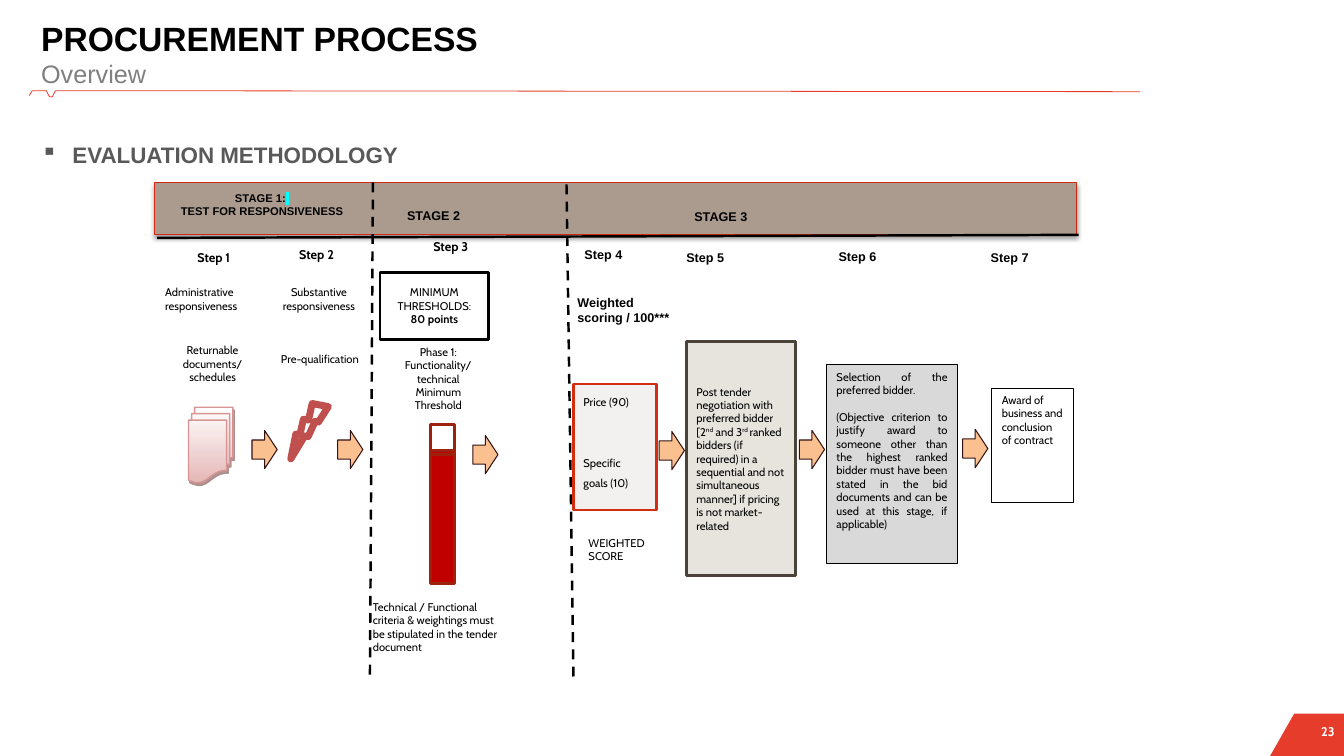
from dataclasses import dataclass, replace

import lxml.etree
import pptx
import pptx.dml.color
import pptx.enum.dml
import pptx.enum.shapes
import pptx.enum.text
import pptx.oxml.ns
import pptx.util

SHAPES = pptx.enum.shapes.MSO_SHAPE
ALIGN = pptx.enum.text.PP_ALIGN
ANCHOR = pptx.enum.text.MSO_ANCHOR
COLUMNS, ROWS = 160, 90
BLACK = "000000"


@dataclass(frozen=True)
class Cell:
    column: float
    row: float
    columns: float
    rows: float


@dataclass(frozen=True)
class Span:
    text: str
    size: float = 8
    font: str = "Cabin"
    color: str = BLACK
    bold: bool = False
    superscript: bool = False
    highlight: str = ""


@dataclass(frozen=True)
class Para:
    spans: tuple[Span, ...]
    align: int = ALIGN.LEFT
    before: float = 0
    spacing: float = 1
    bullet: str = ""


@dataclass(frozen=True)
class Block:
    cell: Cell
    paras: tuple[Para, ...]
    anchor: int = ANCHOR.MIDDLE
    fill: str = ""
    line: str = ""
    weight: float = 0


@dataclass(frozen=True)
class Shadow:
    color: str
    alpha: int
    blur: float
    distance: float
    angle: int


@dataclass(frozen=True)
class Rule:
    start: tuple[float, float]
    end: tuple[float, float]
    dashed: bool = False


deck = pptx.Presentation()
deck.slide_width = pptx.util.Inches(13.33)
deck.slide_height = pptx.util.Inches(7.5)
page = deck.slides.add_slide(deck.slide_layouts[6])


def across(columns: float) -> int:
    return round(deck.slide_width * columns / COLUMNS)


def down(rows: float) -> int:
    return round(deck.slide_height * rows / ROWS)


def place(cell: Cell) -> tuple[int, int, int, int]:
    return across(cell.column), down(cell.row), across(cell.columns), down(cell.rows)


def paint(color: str) -> pptx.dml.color.RGBColor:
    return pptx.dml.color.RGBColor.from_string(color)


def add_element(parent, tag: str, **attributes: str):
    return lxml.etree.SubElement(parent, pptx.oxml.ns.qn(tag), attributes)


def style(shape, fill: str = "", line: str = "", weight: float = 0) -> None:
    shape.shadow.inherit = False
    if fill:
        shape.fill.solid()
        shape.fill.fore_color.rgb = paint(fill)
    else:
        shape.fill.background()
    if line:
        shape.line.color.rgb = paint(line)
        shape.line.width = pptx.util.Pt(weight)
    else:
        shape.line.fill.background()


def draw_shape(kind: int, cell: Cell, fill: str = "", line: str = "", weight: float = 0):
    shape = page.shapes.add_shape(kind, *place(cell))
    style(shape, fill, line, weight)
    return shape


def cast_shadow(shape, shadow: Shadow) -> None:
    effects = shape._element.spPr.find(pptx.oxml.ns.qn("a:effectLst"))
    outer = add_element(effects, "a:outerShdw", blurRad=str(pptx.util.Pt(shadow.blur)),
                        dist=str(pptx.util.Pt(shadow.distance)),
                        dir=str(shadow.angle * 60000), algn="ctr", rotWithShape="0")
    color = add_element(outer, "a:srgbClr", val=shadow.color)
    add_element(color, "a:alpha", val=str(shadow.alpha * 1000))


def write_span(para, part: Span) -> None:
    span = para.add_run()
    span.text = part.text
    span.font.size = pptx.util.Pt(part.size)
    span.font.name = part.font
    span.font.bold = part.bold
    span.font.color.rgb = paint(part.color)
    properties = span._r.get_or_add_rPr()
    if part.superscript:
        properties.set("baseline", "30000")
    if part.highlight:
        mark = add_element(properties, "a:highlight")
        add_element(mark, "a:srgbClr", val=part.highlight)
        properties.find(pptx.oxml.ns.qn("a:solidFill")).addnext(mark)


def draw_block(block: Block):
    if block.line:
        box = draw_shape(SHAPES.RECTANGLE, block.cell, block.fill, block.line, block.weight)
    else:
        box = page.shapes.add_textbox(*place(block.cell))
    frame = box.text_frame
    frame.word_wrap = True
    frame.vertical_anchor = block.anchor
    for index, item in enumerate(block.paras):
        para = frame.add_paragraph() if index else frame.paragraphs[0]
        para.alignment = item.align
        para.line_spacing = item.spacing
        if item.before:
            para.space_before = pptx.util.Pt(item.before)
        if item.bullet:
            properties = para._p.get_or_add_pPr()
            indent = across(3.72)
            properties.set("marL", str(indent))
            properties.set("indent", str(-indent))
            add_element(properties, "a:buChar", char=item.bullet)
        for part in item.spans:
            write_span(para, part)
    return box


def draw_outline(points: list[tuple[float, float]], closed: bool):
    corners = [(across(column), down(row)) for column, row in points]
    builder = page.shapes.build_freeform(*corners[0], scale=1.0)
    builder.add_line_segments(corners[1:], close=closed)
    return builder.convert_to_shape()


def draw_rule(rule: Rule) -> None:
    line = page.shapes.add_connector(
        pptx.enum.shapes.MSO_CONNECTOR.STRAIGHT, across(rule.start[0]), down(rule.start[1]),
        across(rule.end[0]), down(rule.end[1]))
    line.line.color.rgb = paint(BLACK)
    line.line.width = pptx.util.Pt(1.75)
    if rule.dashed:
        line.line.dash_style = pptx.enum.dml.MSO_LINE.DASH
    add_element(line._element.spPr, "a:effectLst")


def plain(text: str, align: int = ALIGN.LEFT, before: float = 0, spacing: float = 1) -> Para:
    return Para((Span(text),), align, before, spacing)


def heading(text: str, size: float = 9, font: str = "Arial", color: str = BLACK) -> Para:
    return Para((Span(text, size, font, color, bold=True),))


BLOCKS = [
    Block(Cell(3.72, 1.44, 132.24, 9.72), (heading("PROCUREMENT PROCESS", 24),
          Para((Span("Overview", 18, "Arial", "808080"),)))),
    Block(Cell(3.72, 16.2, 146.64, 68.76),
          (replace(heading("EVALUATION METHODOLOGY", 16, color="595959"), bullet="▪"),), ANCHOR.TOP),
    Block(Cell(19.2, 20.88, 24, 6.96), (
        Para((Span("STAGE 1:", font="Arial", bold=True),
              Span(" ", font="Arial", bold=True, highlight="00FFFF")), ALIGN.CENTER),
        replace(heading("TEST FOR RESPONSIVENESS", 8), align=ALIGN.CENTER))),
    Block(Cell(47.28, 22.92, 12.48, 5.52), (heading("STAGE 2"),)),
    Block(Cell(81.48, 23.04, 13.68, 5.52), (heading("STAGE 3"),)),
    Block(Cell(18.48, 31.8, 12.84, 7.56), (plain("Administrative responsiveness"),)),
    Block(Cell(31.32, 31.8, 13.32, 7.56), (plain("Substantive responsiveness", ALIGN.CENTER),)),
    Block(Cell(67.56, 33.12, 15.6, 7.56), (heading("Weighted scoring / 100***"),)),
    Block(Cell(19.2, 38.52, 12.24, 9.6), (plain("Returnable documents/ schedules", ALIGN.CENTER),)),
    Block(Cell(32.04, 39.96, 12.12, 5.52), (plain("Pre-qualification", ALIGN.CENTER),)),
    Block(Cell(43.2, 68.76, 18, 11.76), (plain(
        "Technical / Functional criteria & weightings must be stipulated in the tender document"),)),
    Block(Cell(68.88, 60.12, 11.52, 10.56), (plain("WEIGHTED SCORE"),)),
    Block(Cell(46.44, 38.16, 11.52, 13.8), tuple(plain(text, ALIGN.CENTER) for text in (
        "Phase 1:", "Functionality/ technical", "Minimum Threshold"))),
    Block(Cell(45.24, 32.4, 12.96, 8.04), (plain("MINIMUM THRESHOLDS:", ALIGN.CENTER),
          Para((Span("80 points", bold=True),), ALIGN.CENTER)), line=BLACK, weight=2),
    Block(Cell(68.28, 45.72, 9.84, 15), (plain("Price (90)", spacing=1.5),
          plain("Specific goals (10)", before=29, spacing=1.5)), ANCHOR.TOP, "F3F1EF", "D32E12", 2),
    Block(Cell(81.72, 40.68, 12.96, 27.84), (Para((
        Span("Post tender negotiation with preferred bidder [2"), Span("nd", superscript=True),
        Span(" and 3"), Span("rd ", superscript=True),
        Span("ranked bidders (if required) in a sequential and not simultaneous manner] "
             "if pricing is not market-related"))),), fill="E7E4DE", line="4B4239", weight=2),
    Block(Cell(98.4, 43.44, 15.6, 23.64), (
        plain("Selection of the preferred bidder.", ALIGN.JUSTIFY),
        plain("(Objective criterion to justify award to someone other than the highest ranked bidder "
              "must have been stated in the bid documents and can be used at this stage, if applicable)",
              ALIGN.JUSTIFY, before=9.6)), ANCHOR.TOP, "D9D9D9", BLACK, 0.75),
    Block(Cell(118.08, 46.2, 9.72, 13.68), (plain("Award of business and conclusion of contract"),),
          ANCHOR.TOP, "FFFFFF", BLACK, 0.75),
]
STEPS = [(22.32, 27.84, "Cabin"), (34.44, 27.48, "Cabin"), (50.4, 26.64, "Cabin"), (68.4, 27.48, "Arial"),
         (80.52, 27.84, "Arial"), (98.64, 27.72, "Arial"), (116.76, 27.84, "Arial")]
ARROWS = [(30, 51.24), (40.2, 51.24), (56.28, 51.84), (78.48, 51.36), (95.16, 51.24), (114.6, 51.12)]
RULES = [Rule((67.44, 21.96), (68.28, 81.24), True), Rule((44.4, 21.72), (44.04, 80.88), True),
         Rule((18.72, 28.32), (128.4, 27.96))]

footer = draw_outline([(154.08, 84.96), (160, 84.96), (160, 90), (151.2, 90)], True)
style(footer, "E63C2B")
number = draw_block(Block(Cell(152.04, 85.8, 6.84, 2.76), (
    Para((Span("23", 9, color="FFFFFF", bold=True),), ALIGN.RIGHT),), ANCHOR.BOTTOM))
number.text_frame.margin_left = number.text_frame.margin_right = number.text_frame.margin_top = 0
pulse = draw_outline([(135.72, 10.92), (6.6, 10.8), (6.24, 11.52), (5.88, 11.52), (5.52, 10.8),
                      (3.84, 10.8), (3.48, 11.4)], False)
style(pulse, line="E63C2B", weight=0.56)

stage_bar = draw_shape(SHAPES.RECTANGLE, Cell(18.36, 21.72, 109.8, 6.24), "AA9B8E", "D32A0D", 0.75)
cast_shadow(stage_bar, Shadow(BLACK, 35, 3.1, 1.8, 90))
for rule in RULES:
    draw_rule(rule)

documents = draw_shape(SHAPES.FLOWCHART_MULTIDOCUMENT, Cell(22.44, 48.48, 5.28, 9), "FFFFFF", "D99594", 1)
documents.fill.gradient()
documents.fill.gradient_angle = 270
for stop, (position, color) in zip(documents.fill.gradient_stops, [(0, "FFFFFF"), (1, "E5B8B7")]):
    stop.position = position
    stop.color.rgb = paint(color)
cast_shadow(documents, Shadow("622423", 50, 0, 2.2, 63))
bolt = draw_shape(SHAPES.LIGHTNING_BOLT, Cell(34.56, 47.28, 3.72, 7.32), "FFFFFF", "C0504D", 5)
bolt.rotation = 52.9
draw_shape(SHAPES.RECTANGLE, Cell(51.24, 53.64, 2.88, 15.84), "C00000", "9C220D", 2)
draw_shape(SHAPES.RECTANGLE, Cell(51.24, 50.52, 2.88, 3.6), line="9C220D", weight=2)

for block in BLOCKS:
    draw_block(block)
for order, (column, row, font) in enumerate(STEPS, 1):
    draw_block(Block(Cell(column, row, 9.36, 5.52), (heading(f"Step {order}", font=font),)))
for column, row in ARROWS:
    draw_shape(SHAPES.RIGHT_ARROW, Cell(column, row, 3, 4.56), "FAC090", "321212", 0.75)

deck.save("out.pptx")
